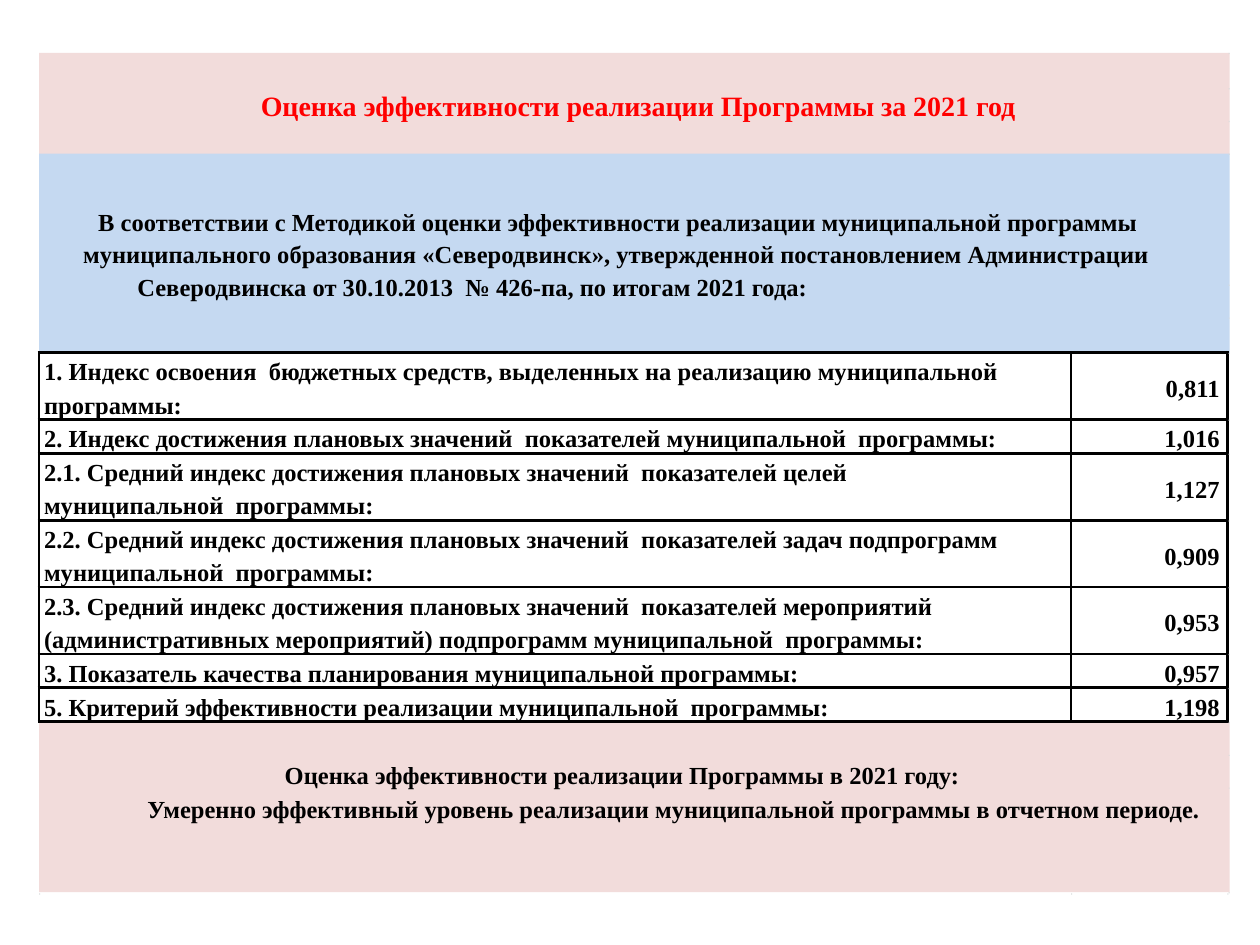
from lxml.etree import SubElement
from pptx import Presentation
from pptx.dml.color import RGBColor
from pptx.enum.shapes import MSO_SHAPE
from pptx.enum.text import MSO_ANCHOR, PP_ALIGN
from pptx.oxml.ns import qn
from pptx.util import Inches, Pt

PINK = RGBColor(0xF2, 0xDC, 0xDB)
BLUE = RGBColor(0xC5, 0xD9, 0xF1)
GREY = RGBColor(0xDA, 0xDC, 0xDD)
WHITE = RGBColor(0xFF, 0xFF, 0xFF)
BLACK = RGBColor(0, 0, 0)
RED = RGBColor(0xFF, 0, 0)

LEFT, RIGHT = 0.31, 9.75
TABLE_TOP = 2.8
ROW_HEIGHTS = {1: 0.27, 2: 0.53}
NO_MARGINS = {"margin_left": 0, "margin_right": 0, "margin_top": 0, "margin_bottom": 0}


def add_rectangle(left, top, width, height, color):
    shape = slide.shapes.add_shape(
        MSO_SHAPE.RECTANGLE, Inches(left), Inches(top), Inches(width), Inches(height))
    shape.shadow.inherit = False
    shape.fill.solid()
    shape.fill.fore_color.rgb = color
    shape.line.fill.background()


def write_line(paragraph, text, size=14, color=BLACK):
    run = paragraph.add_run()
    run.text = text
    for name, value in {"name": "Times New Roman", "size": Pt(size), "bold": True}.items():
        setattr(run.font, name, value)
    run.font.color.rgb = color


presentation = Presentation()
presentation.slide_width = Inches(10)
presentation.slide_height = Inches(7.5)
slide = presentation.slides.add_slide(presentation.slide_layouts[6])

for top, height, color in [(0.42, 0.81, PINK), (1.22, 1.58, BLUE), (5.73, 1.35, PINK)]:
    add_rectangle(LEFT, top, 9.45, height, color)

indicators = [
    (["1. Индекс освоения  бюджетных средств, выделенных на реализацию муниципальной",
      "программы:"], "0,811"),
    (["2. Индекс достижения плановых значений  показателей муниципальной  программы:"], "1,016"),
    (["2.1. Средний индекс достижения плановых значений  показателей целей",
      "муниципальной  программы:"], "1,127"),
    (["2.2. Средний индекс достижения плановых значений  показателей задач подпрограмм",
      "муниципальной  программы:"], "0,909"),
    (["2.3. Средний индекс достижения плановых значений  показателей мероприятий",
      "(административных мероприятий) подпрограмм муниципальной  программы:"], "0,953"),
    (["3. Показатель качества планирования муниципальной программы:"], "0,957"),
    (["5. Критерий эффективности реализации муниципальной  программы:"], "1,198"),
]
row_heights = [ROW_HEIGHTS[len(lines)] for lines, _ in indicators]
table = slide.shapes.add_table(
    len(indicators), 2, Inches(LEFT), Inches(TABLE_TOP),
    Inches(9.43), Inches(sum(row_heights))).table
table.first_row = False
table.horz_banding = False
for column, width in zip(table.columns, [8.19, 1.24]):
    column.width = Inches(width)

for row, height, (lines, value) in zip(table.rows, row_heights, indicators):
    row.height = Inches(height)
    for cell, cell_lines, alignment in zip(
            row.cells, [lines, [value]], [PP_ALIGN.LEFT, PP_ALIGN.RIGHT]):
        cell_format = {**NO_MARGINS, "margin_left": Inches(0.04), "margin_right": Inches(0.06),
                       "vertical_anchor": MSO_ANCHOR.MIDDLE}
        for name, setting in cell_format.items():
            setattr(cell, name, setting)
        for index, line in enumerate(cell_lines):
            text_frame = cell.text_frame
            paragraph = text_frame.add_paragraph() if index else text_frame.paragraphs[0]
            paragraph.alignment = alignment
            paragraph.line_spacing = Pt(19)
            write_line(paragraph, line)
        properties = cell._tc.get_or_add_tcPr()
        for side in ["lnL", "lnR", "lnT", "lnB"]:
            border = SubElement(properties, qn(f"a:{side}"), w=str(Pt(1.75)))
            border_fill = SubElement(border, qn("a:solidFill"))
            SubElement(border_fill, qn("a:srgbClr"), val=str(BLACK))
        cell.fill.solid()
        cell.fill.fore_color.rgb = WHITE

headings = [
    ("В соответствии с Методикой оценки эффективности реализации муниципальной программы",
     0.78, 1.64, 8.97, 14, BLACK),
    ("муниципального образования «Северодвинск», утвержденной постановлением Администрации",
     0.66, 1.9, 9.2, 14, BLACK),
    ("Северодвинска от 30.10.2013  № 426-па, по итогам 2021 года:", 1.09, 2.16, 7.88, 14, BLACK),
    ("Оценка эффективности реализации Программы за 2021 год", 2.07, 0.7, 6.07, 16, RED),
    ("Оценка эффективности реализации Программы в 2021 году:", 2.26, 6.03, 5.45, 14, BLACK),
    ("Умеренно эффективный уровень реализации муниципальной программы в отчетном периоде.",
     1.17, 6.3, 8.43, 14, BLACK),
]
for text, left, top, width, size, color in headings:
    text_frame = slide.shapes.add_textbox(
        Inches(left), Inches(top), Inches(width), Inches(0.27)).text_frame
    for name, value in {**NO_MARGINS, "word_wrap": False}.items():
        setattr(text_frame, name, value)
    paragraph = text_frame.paragraphs[0]
    paragraph.alignment = PP_ALIGN.LEFT
    write_line(paragraph, text, size, color)

row_tops = [TABLE_TOP + sum(row_heights[:index]) for index in range(len(row_heights) + 1)]
for top in [0.42, 0.7, 0.96, 1.22, 2.26, 2.52, *row_tops, 5.99, 6.25, 7.08]:
    add_rectangle(RIGHT, top, 0.01, 0.01, GREY)
for left in [LEFT, 8.5, 9.74]:
    add_rectangle(left, 7.09, 0.01, 0.01, GREY)

presentation.save("out.pptx")
